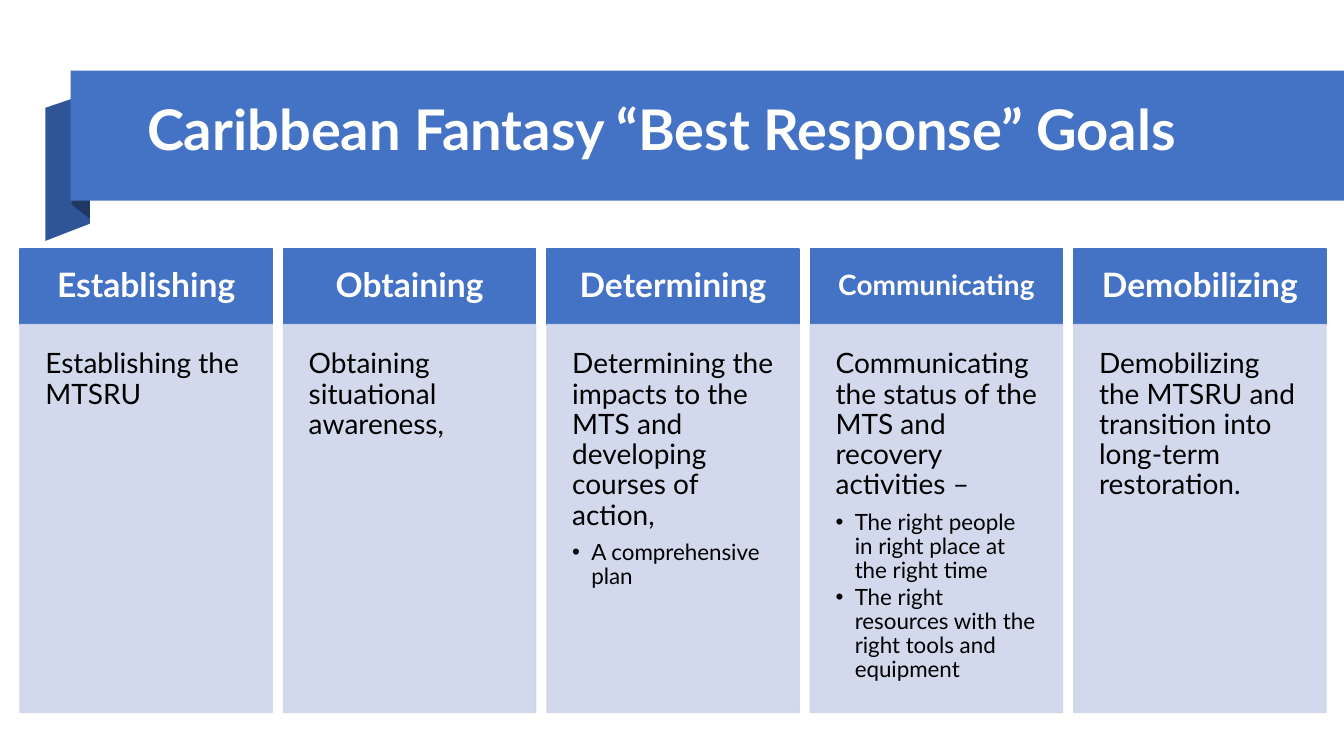
from lxml import etree
from pptx import Presentation
from pptx.dml.color import RGBColor
from pptx.enum.shapes import MSO_SHAPE
from pptx.enum.text import MSO_ANCHOR, PP_ALIGN
from pptx.oxml.ns import qn
from pptx.util import Inches, Pt

RECT = MSO_SHAPE.RECTANGLE
TOP, MIDDLE = MSO_ANCHOR.TOP, MSO_ANCHOR.MIDDLE
LEFT, CENTER = PP_ALIGN.LEFT, PP_ALIGN.CENTER

BLUE, SIDE, FOLD = "4472C4", "2F5597", "203864"
PALE, WHITE, BLACK = "CFD5EA", "FFFFFF", "000000"

# Shares of the slide's width or height, in percent
EDGE, STEP, WIDE = 1.5, 19.6, 18.76
HEAD_TOP, HEAD_TALL, BODY_TALL = 32.93, 10, 51.33

GOALS = [
    ("Establishing", 24, "Establishing the MTSRU", []),
    ("Obtaining", 24, "Obtaining situational awareness,", []),
    ("Determining", 24,
     "Determining the impacts to the MTS and developing courses of action,",
     ["A comprehensive plan"]),
    ("Communicating", 20,
     "Communicating the status of the MTS and recovery activities –",
     ["The right people in right place at the right time",
      "The right resources with the right tools and equipment"]),
    ("Demobilizing", 24,
     "Demobilizing the MTSRU and transition into long-term restoration.", []),
]


def color(code):
    return RGBColor.from_string(code)


class Deck:
    """Style and current slide; all places are percent of the slide's size."""

    font = "Lato"

    def __init__(self):
        self.show = Presentation()
        self.show.slide_width = Inches(13.33)
        self.show.slide_height = Inches(7.5)
        self.shapes = self.show.slides.add_slide(self.show.slide_layouts[6]).shapes

    def place(self, x, y):
        return (round(self.show.slide_width * x / 100),
                round(self.show.slide_height * y / 100))

    def paint(self, shape, fill, line=None, alpha=None):
        shape.shadow.inherit = False
        shape.fill.solid()
        shape.fill.fore_color.rgb = color(fill)
        if line:
            shape.line.color.rgb = color(line)
            shape.line.width = Pt(1)
        else:
            shape.line.fill.background()
        if alpha:
            for tone in shape.element.spPr.iter(qn("a:srgbClr")):
                etree.SubElement(tone, qn("a:alpha"), val=str(alpha * 1000))
        return shape

    def box(self, x, y, w, h, fill, line=None, alpha=None):
        shape = self.shapes.add_shape(RECT, *self.place(x, y), *self.place(w, h))
        return self.paint(shape, fill, line, alpha)

    def facet(self, points, fill):
        first, *rest = [self.place(x, y) for x, y in points]
        build = self.shapes.build_freeform(*first)
        build.add_line_segments(rest, close=True)
        return self.paint(build.convert_to_shape(), fill)

    def label(self, x, y, w, h):
        return self.shapes.add_textbox(*self.place(x, y), *self.place(w, h))

    def frame(self, shape, anchor, inset=None):
        text = shape.text_frame
        text.word_wrap = True
        text.vertical_anchor = anchor
        if inset:
            text.margin_left = text.margin_right = Inches(inset)
            text.margin_top = text.margin_bottom = Inches(inset)
        return text

    def say(self, para, words, size, tone, bold=False, align=LEFT, after=0):
        para.alignment = align
        para.line_spacing = 0.9
        para.space_after = Pt(after)
        run = para.add_run()
        run.text = words
        run.font.name = self.font
        run.font.size = Pt(size)
        run.font.bold = bold
        run.font.color.rgb = color(tone)

    def bullet(self, para, words):
        self.say(para, words, 16, BLACK, after=2)
        props = para._p.get_or_add_pPr()
        props.set("marL", str(Inches(0.19)))
        props.set("indent", str(-Inches(0.19)))
        etree.SubElement(props, qn("a:buFont"), typeface="Arial")
        etree.SubElement(props, qn("a:buChar"), char="•")

    def banner(self, words):
        self.facet([(6.68, 29.6), (3.38, 31.87), (3.38, 14.27), (6.68, 12.27)], SIDE)
        self.facet([(6.68, 28.93), (5.33, 27.07), (5.33, 9.33), (6.68, 11.33)], FOLD)
        self.box(5.25, 9.33, 94.75, 17.2, BLUE)
        text = self.frame(self.label(10.2, 11.07, 84.55, 12.8), MIDDLE)
        self.say(text.paragraphs[0], words, 40, WHITE, bold=True)

    def card(self, x, name, size, goal, points):
        head = self.box(x, HEAD_TOP, WIDE, HEAD_TALL, BLUE, BLUE)
        text = self.frame(head, MIDDLE, 0.2)
        self.say(text.paragraphs[0], name, size, WHITE, True, CENTER)
        body = self.box(x, HEAD_TOP + HEAD_TALL, WIDE, BODY_TALL, PALE, PALE, 90)
        text = self.frame(body, TOP, 0.25)
        self.say(text.paragraphs[0], goal, 20, BLACK, after=7)
        for point in points:
            self.bullet(text.add_paragraph(), point)


def main():
    deck = Deck()
    deck.banner("Caribbean Fantasy “Best Response” Goals")
    for col, goal in enumerate(GOALS):
        deck.card(EDGE + col * STEP, *goal)
    deck.show.save("out.pptx")


if __name__ == "__main__":
    main()
